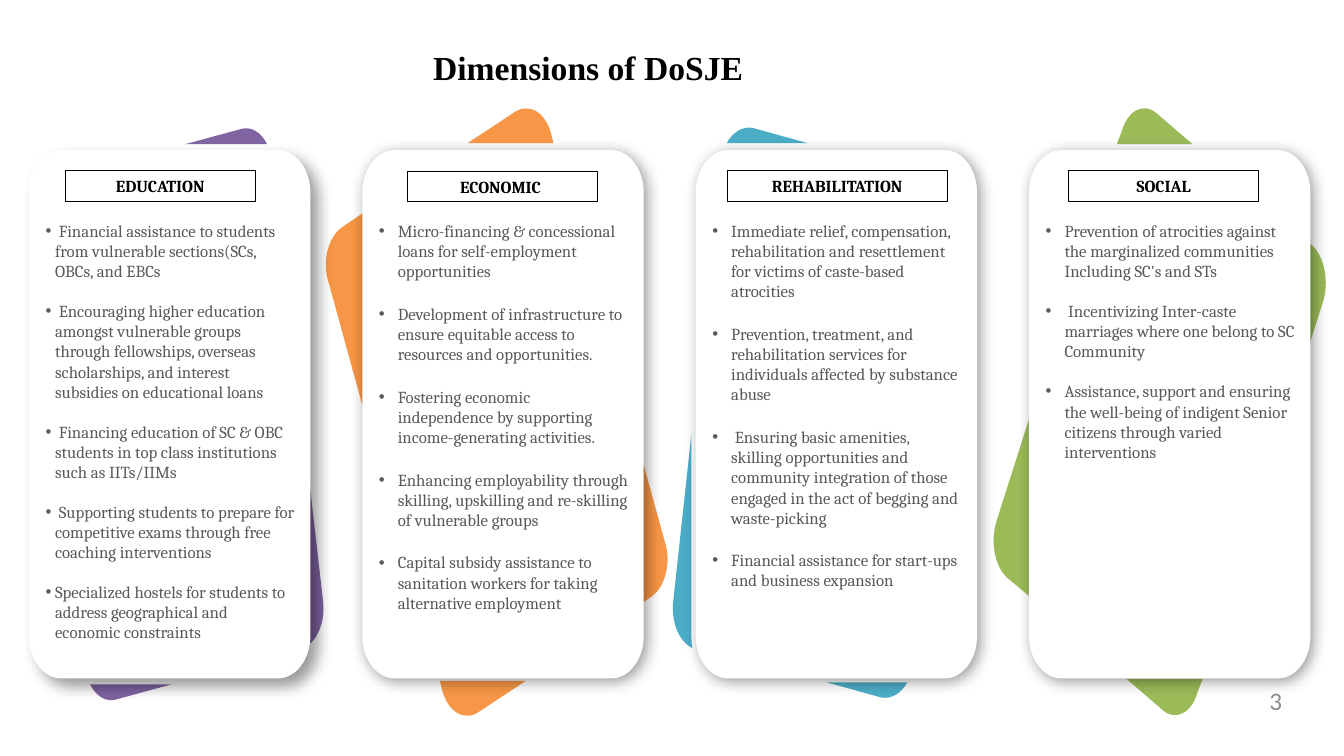
from lxml.etree import SubElement
from pptx import Presentation
from pptx.dml.color import RGBColor
from pptx.enum.lang import MSO_LANGUAGE_ID as Language
from pptx.enum.shapes import MSO_SHAPE as Preset
from pptx.enum.text import MSO_ANCHOR as Anchor, MSO_AUTO_SIZE as AutoSize, PP_ALIGN as Align
from pptx.oxml import parse_xml
from pptx.oxml.ns import nsdecls, qn
from pptx.util import Pt

rgb = RGBColor.from_string
UNITS = 100


def draw_outline(contours, color):
    ends = [[(segment[-2] * UNITS, segment[-1] * UNITS) for segment in contour] for contour in contours]
    builder = slide.shapes.build_freeform(*ends[0][0], scale=Pt(1) / UNITS)
    for index, points in enumerate(ends):
        if index:
            builder.move_to(*points[0])
        builder.add_line_segments(points[1:], close=True)
    shape = builder.convert_to_shape()
    origin = [min(point[axis] for points in ends for point in points) for axis in (0, 1)]
    segments = [segment for contour in contours for segment in contour[1:]]
    for line, segment in zip(list(shape._element.iter(qn("a:lnTo"))), segments):
        if len(segment) == 6:
            line.tag = qn("a:cubicBezTo")
            for position in (0, 2):
                control = line.makeelement(qn("a:pt"))
                for axis, name in enumerate("xy"):
                    control.set(name, str(round(segment[position + axis] * UNITS - origin[axis])))
                line.insert(position // 2, control)
    shape.fill.solid()
    shape.fill.fore_color.rgb = rgb(color)
    shape.line.fill.background()
    shape.shadow.inherit = False
    return shape


def write_text(shape, lines, font="Cambria", size=12, color="000000", bold=False,
               align=Align.LEFT, anchor=Anchor.TOP, insets=(0, 3.6),
               indent=None, before=0, after=0):
    frame = shape.text_frame
    frame.word_wrap = True
    frame.auto_size = AutoSize.SHAPE_TO_FIT_TEXT
    frame.vertical_anchor = anchor
    frame.margin_left = frame.margin_right = Pt(insets[0])
    frame.margin_top = frame.margin_bottom = Pt(insets[1])
    for index, line in enumerate(lines):
        paragraph = frame.paragraphs[0] if index == 0 else frame.add_paragraph()
        paragraph.alignment = align
        paragraph.space_before, paragraph.space_after = Pt(before), Pt(after)
        run = paragraph.add_run()
        run.text = line
        run.font.name, run.font.size, run.font.bold = font, Pt(size), bold
        run.font.language_id = Language.ENGLISH_US
        run.font.color.rgb = rgb(color)
        if indent:
            properties = paragraph._p.get_or_add_pPr()
            properties.set("marL", str(Pt(indent)))
            properties.set("indent", str(-Pt(indent)))
            SubElement(properties, qn("a:buFont")).set("typeface", "Arial")
            SubElement(properties, qn("a:buChar")).set("char", "•")


presentation = Presentation()
presentation.slide_width, presentation.slide_height = Pt(960), Pt(540)
slide = presentation.slides.add_slide(presentation.slide_layouts[6])

accents = [
    ("8064A2", (127.6, 295.9), [
        [(190.8, 103), (132.5, 103), (172.1, 92.2), (179.3, 90, 186.5, 94.3, 190.8, 103)],
        [(24.5, 163.4), (38.2, 283), (38.2, 137.5), (38.2, 134.6, 38.2, 131.8, 38.9, 128.9),
         (28.8, 132.5, 22.3, 147.6, 24.5, 163.4)]]),
    ("F79646", (354.8, 294.3), [
        [(367.9, 79.9), (334.1, 102.2), (395.3, 102.2), (393.8, 95.8),
         (389.5, 79.9, 378, 73.4, 367.9, 79.9)],
        [(244.8, 162), (265, 148.3), (265, 311.8), (234.7, 201.6),
         (229.7, 186.5, 234.7, 168.5, 244.8, 162)]]),
    ("4BACC6", (583.6, 294.8), [
        [(519.1, 102.2), (523.4, 94.3, 530.6, 90, 537.8, 91.4), (576.7, 102.2)],
        [(493.9, 453.6), (493.9, 309.6), (481, 428.4), (478.8, 444.2, 485.3, 458.6, 494.6, 463),
         (493.9, 460.1, 493.9, 456.5, 493.9, 453.6)]]),
    ("9BBB59", (828.4, 294.1), [
        [(851.8, 103), (825.8, 80.6), (817.2, 73.4, 805.7, 78.5, 801.4, 93.6), (797.8, 103)],
        [(736.6, 427), (719.3, 412.6), (710.6, 404.6, 707, 386.6, 712.1, 371.5),
         (736.6, 294.5)]]),
]
for color, center, contours in accents:
    opposite = [[tuple(2 * center[i % 2] - value for i, value in enumerate(segment))
                 for segment in contour] for contour in contours]
    draw_outline(contours + opposite, color)

columns = [
    ("EDUCATION", 46.8, 122, 135.4, 8, dict(indent=6.8, after=14.1), [
        " Financial assistance to students from vulnerable sections(SCs, OBCs, and EBCs",
        " Encouraging higher education amongst vulnerable groups through fellowships, overseas scholarships, and interest subsidies on educational loans",
        " Financing education of SC & OBC students in top class institutions such as IITs/IIMs",
        " Supporting students to prepare for competitive exams through free coaching interventions",
        "Specialized hostels for students to address geographical and economic constraints"]),
    ("ECONOMIC ", 291.2, 122.2, 135.4, 3, dict(indent=13.5, before=8, after=8), [
        "Micro-financing & concessional loans for self-employment opportunities",
        "Development of infrastructure to ensure equitable access to resources and opportunities.",
        "Fostering economic independence by supporting income-generating activities.",
        "Enhancing employability through skilling, upskilling and re-skilling of vulnerable groups",
        "Capital subsidy assistance to sanitation workers for taking alternative employment"]),
    ("REHABILITATION", 519.6, 121.9, 157, 3, dict(indent=13.5, before=8, after=8), [
        "Immediate relief, compensation, rehabilitation and resettlement for victims of caste-based atrocities",
        "Prevention, treatment, and rehabilitation services for individuals affected by substance abuse",
        " Ensuring basic amenities, skilling opportunities and community integration of those engaged in the act of begging and waste-picking",
        "Financial assistance for start-ups and business expansion"]),
    ("SOCIAL", 763.5, 122, 135.4, 3, dict(indent=13.5, after=14.1), [
        "Prevention of atrocities against the marginalized communities Including SC's and STs",
        " Incentivizing Inter-caste marriages where one belong to SC Community",
        "Assistance, support and ensuring the well-being of indigent Senior citizens through varied interventions"]),
]
card_top, card_bottom, card_width, card_pitch = 107.3, 484.6, 201, 238.1
corner_x, corner_y, tangent = 23, 30.2, 0.45
near_x, near_y = corner_x * tangent, corner_y * tangent
for index, (heading, label_left, label_top, label_width, shadow_distance, spacing, items) in enumerate(columns):
    left = 20.7 + index * card_pitch
    right = left + card_width
    card = draw_outline([[
        (right - corner_x, card_bottom), (left + corner_x, card_bottom),
        (left + near_x, card_bottom, left, card_bottom - near_y, left, card_bottom - corner_y),
        (left, card_top + corner_y),
        (left, card_top + near_y, left + near_x, card_top, left + corner_x, card_top),
        (right - corner_x, card_top),
        (right - near_x, card_top, right, card_top + near_y, right, card_top + corner_y),
        (right, card_bottom - corner_y),
        (right, card_bottom - near_y, right - near_x, card_bottom, right - corner_x, card_bottom),
    ]], "FFFFFF")
    effects = card._element.spPr.find(qn("a:effectLst"))
    effects.append(parse_xml(
        f'<a:outerShdw {nsdecls("a")} blurRad="{Pt(11)}" dist="{Pt(shadow_distance)}" dir="2700000" '
        'algn="tl" rotWithShape="0"><a:srgbClr val="000000"><a:alpha val="40000"/></a:srgbClr></a:outerShdw>'))

    label = slide.shapes.add_shape(Preset.RECTANGLE, Pt(label_left), Pt(label_top), Pt(label_width), Pt(21.8))
    label.fill.background()
    label.line.color.rgb = rgb("000000")
    label.line.width = Pt(0.75)
    label.shadow.inherit = False
    write_text(label, [heading], bold=True, align=Align.CENTER, anchor=Anchor.MIDDLE)

    body = slide.shapes.add_textbox(Pt(left + 11.9), Pt(154.1), Pt(178.8), Pt(312))
    write_text(body, items, color="595959", **spacing)

title = slide.shapes.add_textbox(Pt(192.2), Pt(30.2), Pt(455.8), Pt(36))
write_text(title, ["Dimensions of DoSJE"], font="Times New Roman", size=24, bold=True,
           align=Align.CENTER, insets=(7.2, 3.6))
page_number = slide.shapes.add_textbox(Pt(836.6), Pt(486), Pt(82.8), Pt(28.8))
write_text(page_number, ["3"], font="Calibri", size=18, color="8C8C8C",
           align=Align.RIGHT, anchor=Anchor.MIDDLE, insets=(3.6, 2.2))

presentation.save("out.pptx")
